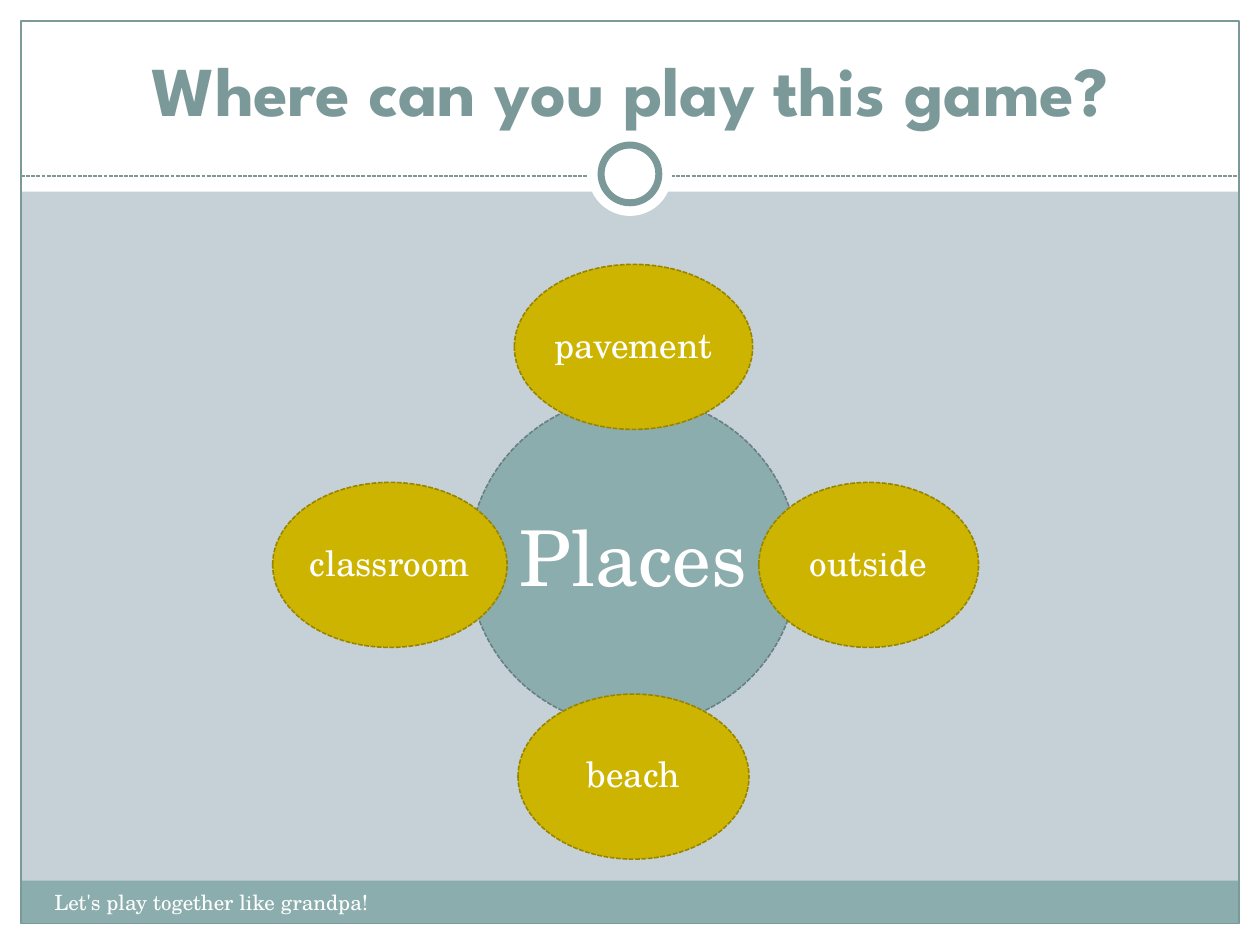
"""Build the slide "Where can you play this game?" with its diagram of places."""
from pptx import Presentation
from pptx.dml.color import RGBColor
from pptx.enum import dml, shapes, text
from pptx.oxml import parse_xml
from pptx.oxml.ns import nsdecls
from pptx.util import Pt

WHITE = RGBColor(0xFF, 0xFF, 0xFF)
PALE = RGBColor(0xC5, 0xD1, 0xD7)
TEAL = RGBColor(0x8C, 0xAD, 0xAE)
DARK_TEAL = RGBColor(0x7C, 0x99, 0x9A)
HUB_EDGE = RGBColor(0x68, 0x80, 0x81)
GOLD = RGBColor(0xCC, 0xB4, 0x00)
GOLD_EDGE = RGBColor(0x97, 0x85, 0x00)
HEADING, BODY = "League Spartan", "TeX Gyre Schola"
RECT, OVAL = shapes.MSO_SHAPE.RECTANGLE, shapes.MSO_SHAPE.OVAL


def add_shape(kind, x, y, w, h, fill=None, edge=None, weight=0.75):
    sp = s.shapes.add_shape(kind, Pt(x), Pt(y), Pt(w), Pt(h))
    sp.shadow.inherit = False
    if fill is None:
        sp.fill.background()
    else:
        sp.fill.solid()
        sp.fill.fore_color.rgb = fill
    if edge is None:
        sp.line.fill.background()
    else:
        sp.line.color.rgb = edge
        sp.line.width = Pt(weight)
    return sp


def add_run(p, words, size, font, color, bold=False):
    r = p.add_run()
    r.text = words
    r.font.size = Pt(size)
    r.font.name = font
    r.font.color.rgb = color
    r.font.bold = bold


prs = Presentation()
prs.slide_width, prs.slide_height = Pt(720), Pt(540)
s = prs.slides.add_slide(prs.slide_layouts[5])
s.background.fill.solid()
s.background.fill.fore_color.rgb = PALE

for x, y, w, h, fill in [
    (0, 528, 720, 12, WHITE),
    (0, 0, 720, 109.5, WHITE),
    (0, 0, 12, 540, WHITE),
    (708, 0, 12, 540, WHITE),
    (12, 503.3, 696, 24.5, TEAL),
]:
    add_shape(RECT, x, y, w, h, fill)
add_shape(RECT, 12, 12, 696, 515.8, edge=DARK_TEAL)

rule = s.shapes.add_connector(shapes.MSO_CONNECTOR.STRAIGHT, Pt(12), Pt(100.6), Pt(708), Pt(100.6))
rule.line.color.rgb = DARK_TEAL
rule.line.width = Pt(0.75)
rule.line.dash_style = dml.MSO_LINE.SQUARE_DOT
rule._element.spPr.append(parse_xml(f"<a:effectLst {nsdecls('a')}/>"))

for size, edge in [(48, None), (33, DARK_TEAL)]:
    add_shape(OVAL, 360 - size / 2, 99.4 - size / 2, size, size, WHITE, edge, 4)

title = s.shapes.title
title.left, title.top, title.width, title.height = Pt(24), Pt(18), Pt(672), Pt(60)
title.element.getparent().append(title.element)
tf = title.text_frame
tf.auto_size = text.MSO_AUTO_SIZE.NONE
tf.vertical_anchor = text.MSO_ANCHOR.BOTTOM
p = tf.paragraphs[0]
p.alignment = text.PP_ALIGN.CENTER
add_run(p, "Where can you play this game?", 40, HEADING, DARK_TEAL, True)

footer = s.shapes.add_textbox(Pt(24), Pt(504.7), Pt(282), Pt(28.8))
footer.text_frame.word_wrap = True
add_run(footer.text_frame.paragraphs[0], "Let's play together like grandpa!", 12, BODY, WHITE)

for words, cx, cy, w, h, fill, edge, size in [
    ("Places", 362, 321, 188.6, 188.6, TEAL, HUB_EDGE, 44),
    ("pavement", 362, 198.2, 136.2, 94.3, GOLD, GOLD_EDGE, 20),
    ("outside", 496.4, 322.8, 125.6, 94.3, GOLD, GOLD_EDGE, 20),
    ("beach", 362, 443.8, 132, 94.3, GOLD, GOLD_EDGE, 20),
    ("classroom", 222.8, 322.8, 134, 94.3, GOLD, GOLD_EDGE, 20),
]:
    sp = add_shape(OVAL, cx - w / 2, cy - h / 2, w, h, fill, edge, 0.9)
    sp.line.dash_style = dml.MSO_LINE.SQUARE_DOT
    tf = sp.text_frame
    tf.word_wrap = False
    tf.vertical_anchor = text.MSO_ANCHOR.MIDDLE
    tf.margin_left = tf.margin_right = tf.margin_top = tf.margin_bottom = Pt(2)
    p = tf.paragraphs[0]
    p.alignment = text.PP_ALIGN.CENTER
    p.line_spacing = 0.9
    add_run(p, words, size, BODY, WHITE)

prs.save("out.pptx")
